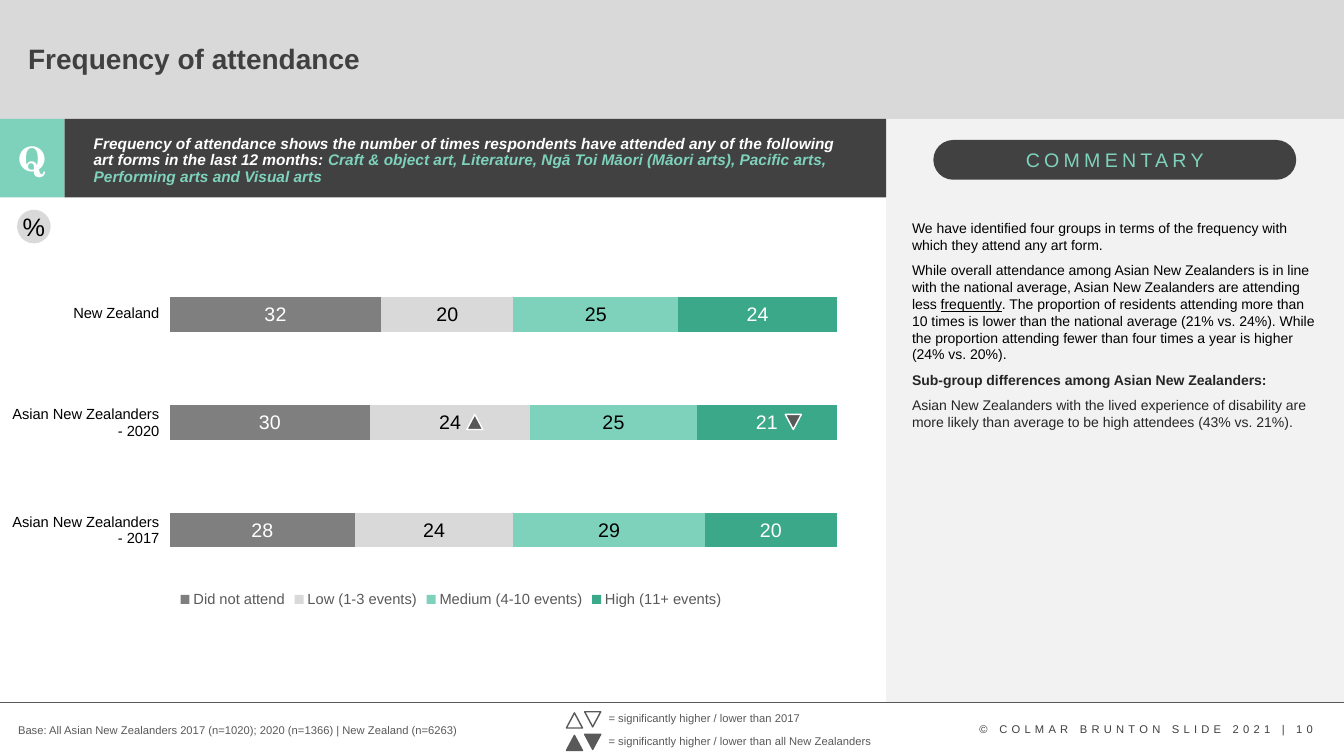
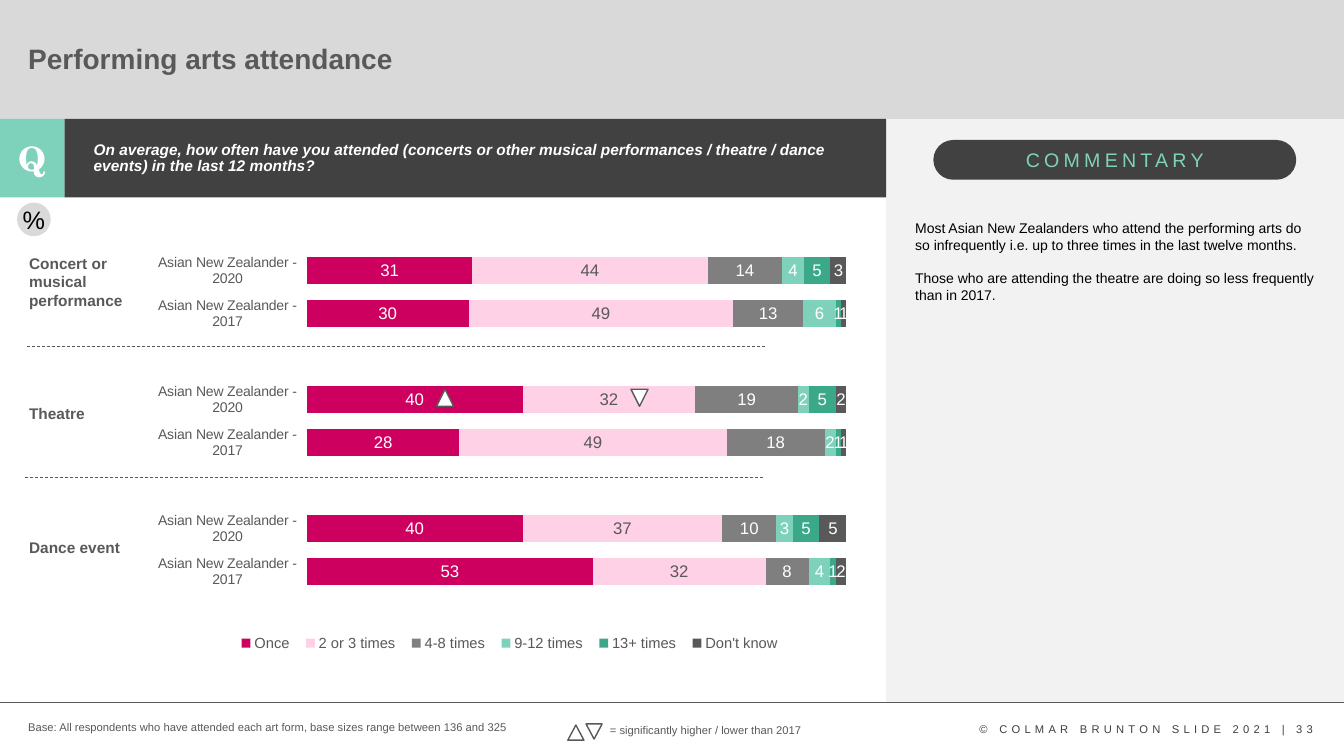
import pptx
import pptx.chart.data
import pptx.dml.color
import pptx.enum.chart
import pptx.enum.dml
import pptx.enum.shapes
import pptx.enum.text
import pptx.oxml
import pptx.oxml.ns
import pptx.util

Pt = pptx.util.Pt
qn = pptx.oxml.ns.qn
SHAPE = pptx.enum.shapes.MSO_SHAPE
ALIGN = pptx.enum.text.PP_ALIGN
ANCHOR = pptx.enum.text.MSO_ANCHOR

# Shared look
COLOURS = {
    "white": "FFFFFF", "black": "000000", "ink": "262626", "heading": "404040",
    "bar": "414141", "slate": "595959", "grey": "7F7F7F", "band": "D9D9D9",
    "panel": "F2F2F2", "mint": "7ED2BB", "green": "3AA889",
    "magenta": "CD005F", "pink": "FFD1E6",
}
STYLES = {
    "title": dict(size=20, colour="heading", bold=True),
    "question": dict(size=11, colour="white", bold=True, italic=True),
    "initial": dict(size=24, colour="white", bold=True, name="TeX Gyre Schola"),
    "pill": dict(size=14, colour="mint", spacing=3),
    "commentary": dict(size=10, colour="black"),
    "copyright": dict(size=8, colour="heading", spacing=3),
    "note": dict(size=8, colour="slate"),
    "percent": dict(size=18, colour="black"),
    "row": dict(size=10.5, colour="black"),
    "group": dict(size=11, colour="slate", bold=True),
    "legend": dict(size=10.5, colour="slate"),
    "axis": dict(size=10, colour="slate"),
}
WIDTH, HEIGHT = 960, 540
BAND_BOTTOM, QUESTION_HEIGHT, RULE_Y = 85, 56, 502
TILE_WIDTH, PANEL_LEFT = 46, 633


def rgb(colour):
    return pptx.dml.color.RGBColor.from_string(COLOURS[colour])


def points(values):
    return [Pt(value) for value in values]


# Text
def format_font(font, size, colour, name="Arial", **flags):
    for attribute, value in dict(flags, size=Pt(size), name=name).items():
        setattr(font, attribute, value)
    font.color.rgb = rgb(colour)


def write(frame, paragraphs, style, align=ALIGN.LEFT, anchor=ANCHOR.TOP,
          insets=None, gap=0, line_spacing=None):
    """Each paragraph is a string or a list of (text, format changes) runs."""
    frame.word_wrap = True
    frame.vertical_anchor = anchor
    if insets is not None:
        for side in ("left", "top", "right", "bottom"):
            setattr(frame, f"margin_{side}", Pt(insets))
    for index, content in enumerate(paragraphs):
        paragraph = frame.add_paragraph() if index else frame.paragraphs[0]
        paragraph.alignment = align
        if line_spacing:
            paragraph.line_spacing = line_spacing
        if index:
            paragraph.space_before = Pt(gap)
        runs = [(content, {})] if isinstance(content, str) else content
        for text, changes in runs:
            run = paragraph.add_run()
            run.text = text
            look = {**STYLES[style], **changes}
            spacing = look.pop("spacing", 0)
            format_font(run.font, **look)
            if spacing:
                run.font._element.set("spc", str(spacing * 100))


def add_text(shapes, box, paragraphs, style, **options):
    write(shapes.add_textbox(*points(box)).text_frame, paragraphs, style, **options)


# Shapes and lines
def add_block(shapes, kind, box, fill, line=None):
    block = shapes.add_shape(kind, *points(box))
    block.shadow.inherit = False
    block.fill.solid()
    block.fill.fore_color.rgb = rgb(fill)
    if line:
        block.line.color.rgb = rgb(line)
        block.line.width = Pt(1)
    else:
        block.line.fill.background()
    return block


def add_label_block(shapes, kind, box, fill, text, style):
    block = add_block(shapes, kind, box, fill)
    write(block.text_frame, [text], style, align=ALIGN.CENTER,
          anchor=ANCHOR.MIDDLE, insets=0)
    return block


def add_rule(shapes, left, right, y, dash=None):
    rule = shapes.add_connector(pptx.enum.shapes.MSO_CONNECTOR.STRAIGHT,
                                *points((left, y, right, y)))
    rule.line.color.rgb = rgb("slate")
    rule.line.width = Pt(0.5)
    if dash:
        rule.line.dash_style = dash
    rule._element.spPr.append(pptx.oxml.parse_xml(
        f'<a:effectLst {pptx.oxml.ns.nsdecls("a")}/>'))


def add_marker(shapes, left, top, fill, line, down=False, size=(11.5, 10.8)):
    marker = add_block(shapes, SHAPE.ISOSCELES_TRIANGLE, (left, top, *size), fill, line)
    marker.rotation = 180 if down else 0


def add_marker_key(slide, left, top, fill, text):
    key = slide.shapes.add_group_shape().shapes
    add_text(key, (left + 23, top, 210, 17), [text], "note")
    add_marker(key, left, top + 4.5, fill, "slate")
    add_marker(key, left + 13, top + 3.7, fill, "slate", down=True)


# Charts and tables
def set_layout(parent, index, x, y, w, h, inner=False):
    for old in parent.findall(qn("c:layout")):
        parent.remove(old)
    target = '<c:layoutTarget val="inner"/>' if inner else ""
    modes = "".join(f'<c:{axis}Mode val="edge"/>' for axis in "xy")
    sizes = "".join(f'<c:{name} val="{value}"/>'
                    for name, value in zip("xywh", (x, y, w, h)))
    parent.insert(index, pptx.oxml.parse_xml(
        f'<c:layout {pptx.oxml.ns.nsdecls("c")}><c:manualLayout>'
        f'{target}{modes}{sizes}</c:manualLayout></c:layout>'))


def add_stacked_bars(slide, box, categories, series, label_size, gap, plot_area,
                     show_categories=False, legend_area=None):
    """Series rows are (name, fill, label colour, values)."""
    data = pptx.chart.data.CategoryChartData()
    data.categories = categories
    for name, _, _, values in series:
        data.add_series(name, values)
    chart = slide.shapes.add_chart(
        pptx.enum.chart.XL_CHART_TYPE.BAR_STACKED_100, *points(box), data).chart
    chart.has_title = False
    format_font(chart.font, 10, "black")

    plot = chart.plots[0]
    plot.vary_by_categories = False
    plot.gap_width, plot.overlap = gap, 100
    for bars, (_, fill, label_colour, _) in zip(plot.series, series):
        bars.format.fill.solid()
        bars.format.fill.fore_color.rgb = rgb(fill)
        labels = bars.data_labels
        labels.show_value = True
        labels.position = pptx.enum.chart.XL_LABEL_POSITION.CENTER
        format_font(labels.font, label_size, label_colour)

    chart.value_axis.has_major_gridlines = False
    chart.value_axis.visible = False
    chart.category_axis.visible = show_categories
    if show_categories:
        chart.category_axis.format.line.fill.background()
        format_font(chart.category_axis.tick_labels.font, **STYLES["axis"])

    chart.has_legend = True
    chart.legend.position = pptx.enum.chart.XL_LEGEND_POSITION.BOTTOM
    chart.legend.include_in_layout = False
    format_font(chart.legend.font, **STYLES["legend"])
    set_layout(chart._chartSpace.find(".//" + qn("c:plotArea")), 0, *plot_area, inner=True)
    if legend_area:
        set_layout(chart.legend._element, 1, *legend_area)


def add_row_labels(slide, left, top, width, heights, labels):
    table = slide.shapes.add_table(
        len(labels), 1, *points((left, top, width, sum(heights)))).table
    table.first_row = table.horz_banding = False
    for row, height, label in zip(table.rows, heights, labels):
        row.height = Pt(height)
        cell = row.cells[0]
        cell.fill.background()
        write(cell.text_frame, [label], "row", align=ALIGN.RIGHT)
        cell.vertical_anchor = ANCHOR.MIDDLE
        for side in ("left", "top", "right", "bottom"):
            setattr(cell, f"margin_{side}", Pt(0.7))


# Frame common to both slides
def add_report_slide(deck, number, title, question, question_top, commentary,
                     commentary_left, commentary_gap, percent_top, title_colour="heading"):
    slide = deck.slides.add_slide(deck.slide_layouts[6])
    shapes = slide.shapes
    add_block(shapes, SHAPE.RECTANGLE, (0, 0, WIDTH, BAND_BOTTOM), "band")
    add_block(shapes, SHAPE.RECTANGLE,
              (PANEL_LEFT, BAND_BOTTOM, WIDTH - PANEL_LEFT, RULE_Y - BAND_BOTTOM), "panel")
    add_block(shapes, SHAPE.RECTANGLE,
              (TILE_WIDTH, BAND_BOTTOM, PANEL_LEFT - TILE_WIDTH, QUESTION_HEIGHT), "bar")
    add_label_block(shapes, SHAPE.RECTANGLE, (0, BAND_BOTTOM, TILE_WIDTH, QUESTION_HEIGHT),
                    "mint", "Q", "initial")
    pill = add_label_block(shapes, SHAPE.ROUNDED_RECTANGLE, (666.7, 100, 259.2, 28.4),
                           "bar", "COMMENTARY", "pill")
    pill.adjustments[0] = 0.5
    add_rule(shapes, 0, WIDTH, RULE_Y)
    add_text(shapes, (692.6, 512.6, 260, 17),
             [f"© COLMAR BRUNTON SLIDE 2021 | {number}"], "copyright")
    add_text(shapes, (13, 15, 806, 56), [[(title, {"colour": title_colour})]], "title",
             anchor=ANCHOR.MIDDLE, line_spacing=0.9)
    add_text(shapes, (59.8, question_top, 547, 33), [question], "question", line_spacing=0.9)
    add_text(shapes, (commentary_left, 153.4, 303, 158), commentary, "commentary",
             gap=commentary_gap)
    add_label_block(shapes, SHAPE.OVAL, (12.2, percent_top, 24, 24), "band", "%", "percent")
    return slide


def build_frequency(deck):
    slide = add_report_slide(
        deck, 10, "Frequency of attendance",
        [("Frequency of attendance shows the number of times respondents have attended any "
          "of the following art forms in the last 12 months: ", {}),
         ("Craft & object art, Literature, Ngā Toi Māori (Māori arts), Pacific arts, "
          "Performing arts and Visual arts", {"colour": "mint"})],
        93.6,
        ["We have identified four groups in terms of the frequency with which they attend "
         "any art form.",
         [("While overall attendance among Asian New Zealanders is in line with the national "
           "average, Asian New Zealanders are attending less ", {}),
          ("frequently", {"underline": True}),
          (". The proportion of residents attending more than 10 times is lower than the "
           "national average (21% vs. 24%). While the proportion attending fewer than four "
           "times a year is higher (24% vs. 20%).", {})],
         [("Sub-group differences among Asian New Zealanders:",
           {"colour": "ink", "bold": True})],
         [("Asian New Zealanders with the lived experience of disability are more likely "
           "than average to be high attendees (43% vs. 21%).", {"colour": "ink"})]],
        644.4, 6, 149.8)
    add_stacked_bars(
        slide, (29.5, 148.3, 585.4, 288.7), ["1", "2", "3"],
        [("Did not attend", "grey", "white", (28, 30, 32)),
         ("Low (1-3 events)", "band", "black", (24, 24, 20)),
         ("Medium (4-10 events)", "mint", "black", (29, 25, 25)),
         ("High (11+ events)", "green", "white", (20, 21, 24))],
        14, 213, (0.157, 0.131, 0.814, 0.801))
    add_row_labels(slide, 5.8, 184.3, 108.7, (79.2, 77, 77),
                   ["New Zealand", "Asian New Zealanders - 2020", "Asian New Zealanders - 2017"])
    add_marker(slide.shapes, 333.4, 296, "slate", "white")
    add_marker(slide.shapes, 560.9, 296, "slate", "white", down=True)
    add_text(slide.shapes, (5.8, 513.4, 371, 17),
             ["Base: All Asian New Zealanders 2017 (n=1020); 2020 (n=1366) | "
              "New Zealand (n=6263)"], "note")
    for top, fill, group in ((504.7, "white", "2017"), (520.8, "slate", "all New Zealanders")):
        add_marker_key(slide, 404.6, top, fill, f"= significantly higher / lower than {group}")


def build_performing_arts(deck):
    slide = add_report_slide(
        deck, 33, "Performing arts attendance",
        "On average, how often have you attended (concerts or other musical performances / "
        "theatre / dance events) in the last 12 months?",
        97.9,
        ["Most Asian New Zealanders who attend the performing arts do so infrequently i.e. "
         "up to three times in the last twelve months.",
         "Those who are attending the theatre are doing so less frequently than in 2017."],
        646.6, 11.5, 144.7, title_colour="slate")
    years = [f"Asian New Zealander - {year}" for year in (2017, 2020)]
    add_stacked_bars(
        slide, (103, 137.5, 511.9, 355.7), [*years, "", *years, "", *years],
        [("Once", "magenta", "white", (53, 40, None, 28, 40, None, 30, 31)),
         ("2 or 3 times", "pink", "slate", (32, 37, None, 49, 32, None, 49, 44)),
         ("4-8 times", "grey", "white", (8, 10, None, 18, 19, None, 13, 14)),
         ("9-12 times", "mint", "white", (4, 3, None, 2, 2, None, 6, 4)),
         ("13+ times", "green", "white", (1, 5, None, 1, 5, None, 1, 5)),
         ("Don't know", "slate", "white", (2, 5, None, 1, 2, None, 1, 3))],
        12, 60, (0.227, 0.114, 0.753, 0.691),
        show_categories=True, legend_area=(0.12, 0.87, 0.78, 0.07))
    for top, art_form in ((177.8, "Concert or musical performance"),
                          (285.1, "Theatre"), (380.9, "Dance event")):
        add_text(slide.shapes, (13.7, top, 101.5, 21), [art_form], "group")
    for left, y in ((19.4, 247.7), (18, 341.3)):
        add_rule(slide.shapes, left, left + 527, y, pptx.enum.dml.MSO_LINE.DASH)
    for left, down in ((311.8, False), (450.7, True)):
        add_marker(slide.shapes, left, 278, "white", "slate", down, (12.2, 12.2))
    add_text(slide.shapes, (13, 511.2, 365, 17),
             ["Base: All respondents who have attended each art form, base sizes range "
              "between 136 and 325"], "note")
    add_marker_key(slide, 405.6, 513.4, "white", "= significantly higher / lower than 2017")


def main():
    deck = pptx.Presentation()
    deck.slide_width, deck.slide_height = Pt(WIDTH), Pt(HEIGHT)
    build_frequency(deck)
    build_performing_arts(deck)
    deck.save("out.pptx")


if __name__ == "__main__":
    main()
